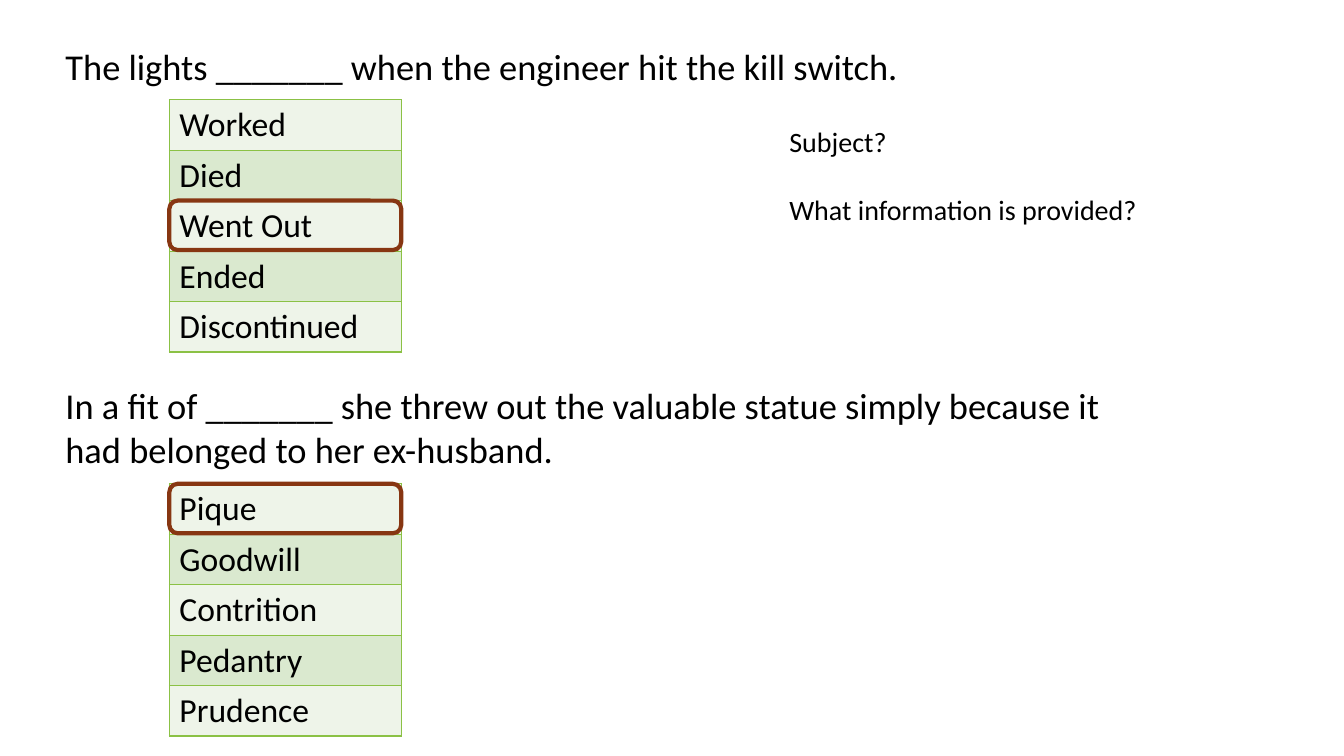
from lxml.etree import SubElement
from pptx import Presentation
from pptx.dml.color import RGBColor
from pptx.enum.shapes import MSO_SHAPE
from pptx.enum.text import MSO_AUTO_SIZE
from pptx.oxml.ns import qn
from pptx.util import Inches, Pt

BLACK = RGBColor(0x00, 0x00, 0x00)
BORDER_GREEN = RGBColor(0x8B, 0xC1, 0x45)
BAND_FILLS = (RGBColor(0xEE, 0xF4, 0xE9), RGBColor(0xDA, 0xE9, 0xCF))
ANSWER_BROWN = RGBColor(0x87, 0x36, 0x12)

FONT_NAME = "Calibri"
CHOICES_LEFT, CHOICES_WIDTH, ROW_HEIGHT = 1.68, 2.3, 0.5

QUESTIONS = (
    ("The lights _______ when the engineer hit the kill switch.",
     0.39, 0.54, 0.99,
     ("Worked", "Died", "Went Out", "Ended", "Discontinued"), "Went Out"),
    ("In a fit of _______ she threw out the valuable statue simply because it "
     "had belonged to her ex-husband.",
     3.75, 0.98, 4.8,
     ("Pique", "Goodwill", "Contrition", "Pedantry", "Prudence"), "Pique"),
)
HINTS = ("Subject?", "What information is provided?")


def format_paragraph(paragraph, size):
    """Give a paragraph the slide's font in black."""
    paragraph.font.name = FONT_NAME
    paragraph.font.size = Pt(size)
    paragraph.font.color.rgb = BLACK


def add_text(slide, lines, left, top, width, height, size, gap=0):
    """Add a wrapping text box with one paragraph per line."""
    box = slide.shapes.add_textbox(
        Inches(left), Inches(top), Inches(width), Inches(height))
    frame = box.text_frame
    frame.word_wrap = True
    frame.auto_size = MSO_AUTO_SIZE.SHAPE_TO_FIT_TEXT
    for index, line in enumerate(lines):
        paragraph = frame.add_paragraph() if index else frame.paragraphs[0]
        paragraph.text = line
        if index:
            paragraph.space_before = Pt(gap)
        format_paragraph(paragraph, size)


def add_borders(cell):
    """Draw a thin green line on all four sides of a cell."""
    properties = cell._tc.get_or_add_tcPr()
    for position, side in enumerate(("a:lnL", "a:lnR", "a:lnT", "a:lnB")):
        line = SubElement(properties, qn(side), w=str(Pt(1)))
        fill = SubElement(line, qn("a:solidFill"))
        SubElement(fill, qn("a:srgbClr"), val=str(BORDER_GREEN))
        properties.insert(position, line)


def add_choices(slide, choices, top):
    """Add a one-column banded table of answer choices."""
    table = slide.shapes.add_table(
        len(choices), 1, Inches(CHOICES_LEFT), Inches(top),
        Inches(CHOICES_WIDTH), Inches(ROW_HEIGHT * len(choices))).table
    table.first_row = False
    for row, choice in enumerate(choices):
        cell = table.cell(row, 0)
        cell.text = choice
        format_paragraph(cell.text_frame.paragraphs[0], 24)
        cell.fill.solid()
        cell.fill.fore_color.rgb = BAND_FILLS[row % 2]
        add_borders(cell)


def add_answer_frame(slide, top):
    """Outline the correct choice with a rounded rectangle."""
    shape = slide.shapes.add_shape(
        MSO_SHAPE.ROUNDED_RECTANGLE, Inches(CHOICES_LEFT), Inches(top),
        Inches(CHOICES_WIDTH), Inches(0.49))
    shape.shadow.inherit = False
    shape.fill.background()
    shape.line.color.rgb = ANSWER_BROWN
    shape.line.width = Pt(3)


def main():
    """Build the vocabulary slide and save it."""
    presentation = Presentation()
    presentation.slide_width = Inches(13.33)
    presentation.slide_height = Inches(7.5)
    slide = presentation.slides.add_slide(presentation.slide_layouts[6])
    for question, top, height, choices_top, choices, answer in QUESTIONS:
        add_text(slide, (question,), 0.55, top, 10.72, height, 26)
        add_choices(slide, choices, choices_top)
        add_answer_frame(slide, choices_top + ROW_HEIGHT * choices.index(answer))
    add_text(slide, HINTS, 7.73, 1.19, 3.82, 1.11, 20, gap=24)
    presentation.save("out.pptx")


if __name__ == "__main__":
    main()
